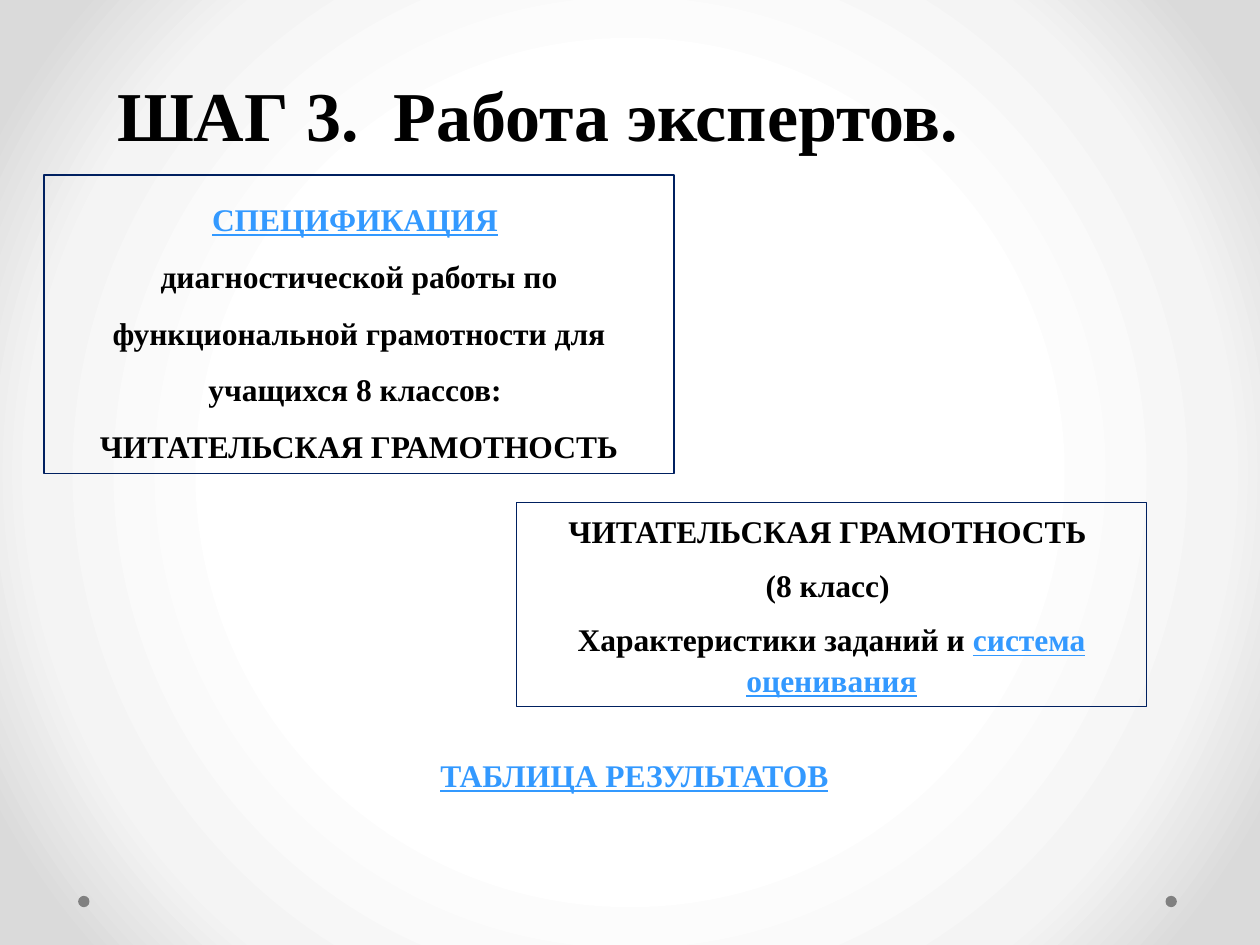
"""Build the slide on step 3, the work of the experts."""
from lxml import etree
from pptx import Presentation
from pptx import util as u
from pptx.dml.color import RGBColor
from pptx.enum import shapes, text
from pptx.oxml.ns import qn

COLORS = {"ink": "000000", "link": "3399FF", "border": "002060", "dot": "808080"}
STOPS = {50: "FFFFFF", 76: "F4F4F4", 92: "DADADA"}
FONT = "Times New Roman"

prs = Presentation()
prs.slide_width, prs.slide_height = u.Inches(10), u.Inches(7.5)
col, row = prs.slide_width / 100, prs.slide_height / 100
s = prs.slides.add_slide(prs.slide_layouts[5])


def place(sp, x, y, w, h):
    sp.left, sp.top, sp.width, sp.height = (
        round(v) for v in (x * col, y * row, w * col, h * row))


def write(tf, paragraphs, size=18, align=text.PP_ALIGN.CENTER, spacing=1.0, after=0):
    tf.word_wrap = True
    tf.vertical_anchor = text.MSO_ANCHOR.TOP
    for i, parts in enumerate(paragraphs):
        p = tf.add_paragraph() if i else tf.paragraphs[0]
        p.alignment, p.line_spacing = align, spacing
        p.space_before, p.space_after = u.Pt(0), u.Pt(after)
        for wording, color in parts:
            r = p.add_run()
            r.text = wording
            r.font.name, r.font.size, r.font.bold = FONT, u.Pt(size), True
            r.font.underline = color == "link"
            r.font.color.rgb = RGBColor.from_string(COLORS[color])


s.background.fill.gradient()
grad = s.element.xpath(".//p:bgPr/a:gradFill")[0]
for child in list(grad):
    grad.remove(child)
stops = etree.SubElement(grad, qn("a:gsLst"))
for pos, color in STOPS.items():
    stop = etree.SubElement(stops, qn("a:gs"), pos=str(pos * 1000))
    etree.SubElement(stop, qn("a:srgbClr"), val=color)
focus = etree.SubElement(grad, qn("a:path"), path="circle")
etree.SubElement(focus, qn("a:fillToRect"), l="50000", t="50000", r="50000", b="50000")

for x in (6.2, 92.5):
    sp = s.shapes.add_shape(shapes.MSO_SHAPE.OVAL, 0, 0, 0, 0)
    place(sp, x, 94.8, 0.9, 1.2)
    sp.shadow.inherit = False
    sp.fill.solid()
    sp.fill.fore_color.rgb = RGBColor.from_string(COLORS["dot"])
    sp.line.fill.background()

title = s.shapes.title
place(title, 8.3, 6.93, 85, 10.27)
write(title.text_frame, [[("ШАГ 3.  Работа экспертов.", "ink")]], 40, text.PP_ALIGN.LEFT)

boxes = [
    ((3.5, 18.53, 50, 31.6), 1.5, 0, [
        [("СПЕЦИФИКАЦИЯ", "link"), (" ", "ink")],
        [("диагностической работы по функциональной грамотности для учащихся 8 классов: ", "ink")],
        [("ЧИТАТЕЛЬСКАЯ ГРАМОТНОСТЬ", "ink")],
    ]),
    ((41, 53.2, 50, 21.6), 1.07, 8, [
        [("ЧИТАТЕЛЬСКАЯ ГРАМОТНОСТЬ ", "ink")],
        [("(8 класс) ", "ink")],
        [("Характеристики заданий и ", "ink"), ("система оценивания", "link")],
    ]),
]
for area, spacing, after, paragraphs in boxes:
    sp = s.shapes.add_shape(shapes.MSO_SHAPE.RECTANGLE, 0, 0, 0, 0)
    place(sp, *area)
    sp.shadow.inherit = False
    sp.fill.background()
    sp.line.color.rgb = RGBColor.from_string(COLORS["border"])
    sp.line.width = u.Pt(0.75)
    write(sp.text_frame, paragraphs, spacing=spacing, after=after)

results = s.shapes.add_textbox(0, 0, 0, 0)
place(results, 16.1, 79.33, 68.5, 5.33)
write(results.text_frame, [[("ТАБЛИЦА РЕЗУЛЬТАТОВ", "link")]])

prs.save("out.pptx")
